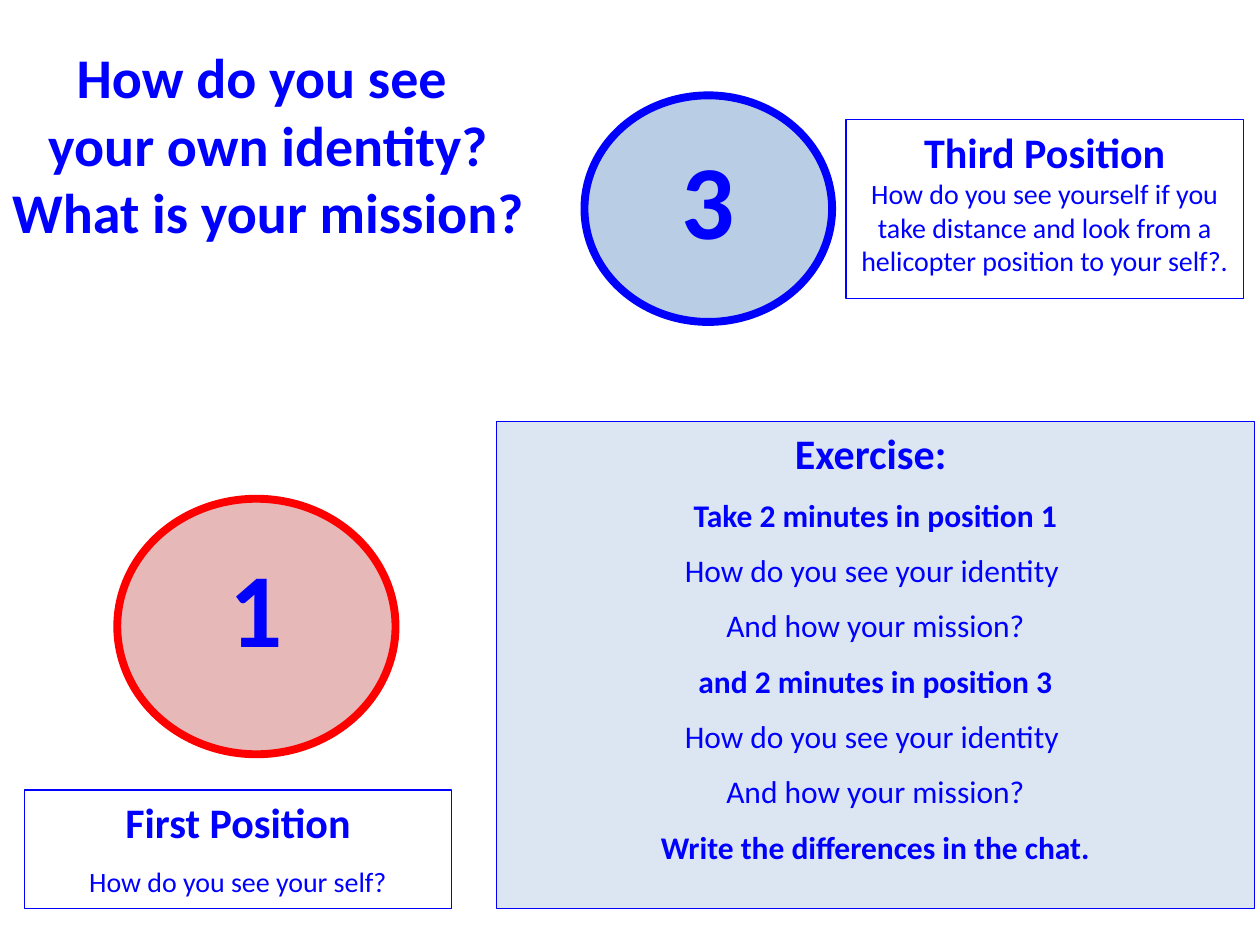
from dataclasses import dataclass

from pptx import Presentation
from pptx.dml.color import RGBColor
from pptx.enum.shapes import MSO_SHAPE
from pptx.enum.text import MSO_ANCHOR, MSO_AUTO_SIZE, PP_ALIGN
from pptx.util import Pt

OVAL, RECT = MSO_SHAPE.OVAL, MSO_SHAPE.RECTANGLE
TOP, CENTER = MSO_ANCHOR.TOP, PP_ALIGN.CENTER
GROW = MSO_AUTO_SIZE.SHAPE_TO_FIT_TEXT


@dataclass(frozen=True)
class Theme:
    font: str = "Calibri"
    blue: str = "0000FF"
    red: str = "FF0000"
    white: str = "FFFFFF"
    sky: str = "B9CDE5"
    pink: str = "E6B9B8"
    pale: str = "DCE6F2"
    number: int = 60
    title: int = 32
    heading: int = 24
    step: int = 18
    body: int = 16
    thick: float = 4.5
    thin: float = 0.75
    gap: int = 10


T = Theme()

TITLE = ["How do you see ", "your own identity?", "What is your mission?"]
TITLE_BOX = (-1.5, 21, 309.5, 124)

POSITIONS = [
    {
        "number": "3",
        "circle": (334, 54.5, 141.5, 129.5),
        "fill": T.sky,
        "line": T.blue,
        "heading": "Third Position",
        "question": "How do you see yourself if you take distance and look "
                    "from a helicopter position to your self?.",
        "label": (483.5, 68.5, 227, 102),
        "before": 3,
        "after": 0,
    },
    {
        "number": "1",
        "circle": (67, 285, 159, 146),
        "fill": T.pink,
        "line": T.red,
        "heading": "First Position",
        "question": "How do you see your self?",
        "label": (14, 451.5, 244, 67.5),
        "before": 0,
        "after": T.gap,
    },
]

EXERCISE_BOX = (283.75, 241, 433, 278)
EXERCISE_HEADING = "Exercise: "
QUESTIONS = ["How do you see your identity ", "And how your mission?"]
STEPS = [
    ("Take 2 minutes in position 1", QUESTIONS),
    ("and 2 minutes in position 3", QUESTIONS),
    ("Write the differences in the chat.", []),
]


def rgb(color):
    return RGBColor.from_string(color)


def write(tf, rows):
    for i, (text, size, bold, before, after) in enumerate(rows):
        p = tf.paragraphs[0] if i == 0 else tf.add_paragraph()
        p.text = text
        p.alignment = CENTER
        p.space_before, p.space_after = Pt(before), Pt(after)
        p.font.name, p.font.size, p.font.bold = T.font, Pt(size), bold
        p.font.color.rgb = rgb(T.blue)


def add_panel(shapes, kind, box, fill, line, width, rows):
    sp = shapes.add_shape(kind, *map(Pt, box))
    sp.shadow.inherit = False
    sp.fill.solid()
    sp.fill.fore_color.rgb = rgb(fill)
    sp.line.color.rgb = rgb(line)
    sp.line.width = Pt(width)
    tf = sp.text_frame
    tf.word_wrap = True
    tf.vertical_anchor = TOP
    write(tf, rows)


def add_position(s, pos):
    shapes = s.shapes.add_group_shape().shapes
    add_panel(shapes, OVAL, pos["circle"], pos["fill"], pos["line"], T.thick,
              [(pos["number"], T.number, True, 0, T.gap)])
    add_panel(shapes, RECT, pos["label"], T.white, T.blue, T.thin, [
        (pos["heading"], T.heading, True, pos["before"], pos["after"]),
        (pos["question"], T.body, False, 0, T.gap),
    ])


def add_title(s):
    tf = s.shapes.add_textbox(*map(Pt, TITLE_BOX)).text_frame
    tf.word_wrap = False
    tf.auto_size = GROW
    write(tf, [(text, T.title, True, 0, 0) for text in TITLE])


def add_exercise(s):
    rows = [(EXERCISE_HEADING, T.heading, True, 0, T.gap)]
    for step, questions in STEPS:
        rows.append((step, T.step, True, 0, T.gap))
        rows += [(q, T.step, False, 0, T.gap) for q in questions]
    add_panel(s.shapes, RECT, EXERCISE_BOX, T.pale, T.blue, T.thin, rows)


def main():
    prs = Presentation()
    prs.slide_width, prs.slide_height = Pt(720), Pt(540)
    s = prs.slides.add_slide(prs.slide_layouts[6])
    for pos in POSITIONS:
        add_position(s, pos)
    add_title(s)
    add_exercise(s)
    prs.save("out.pptx")


if __name__ == "__main__":
    main()
